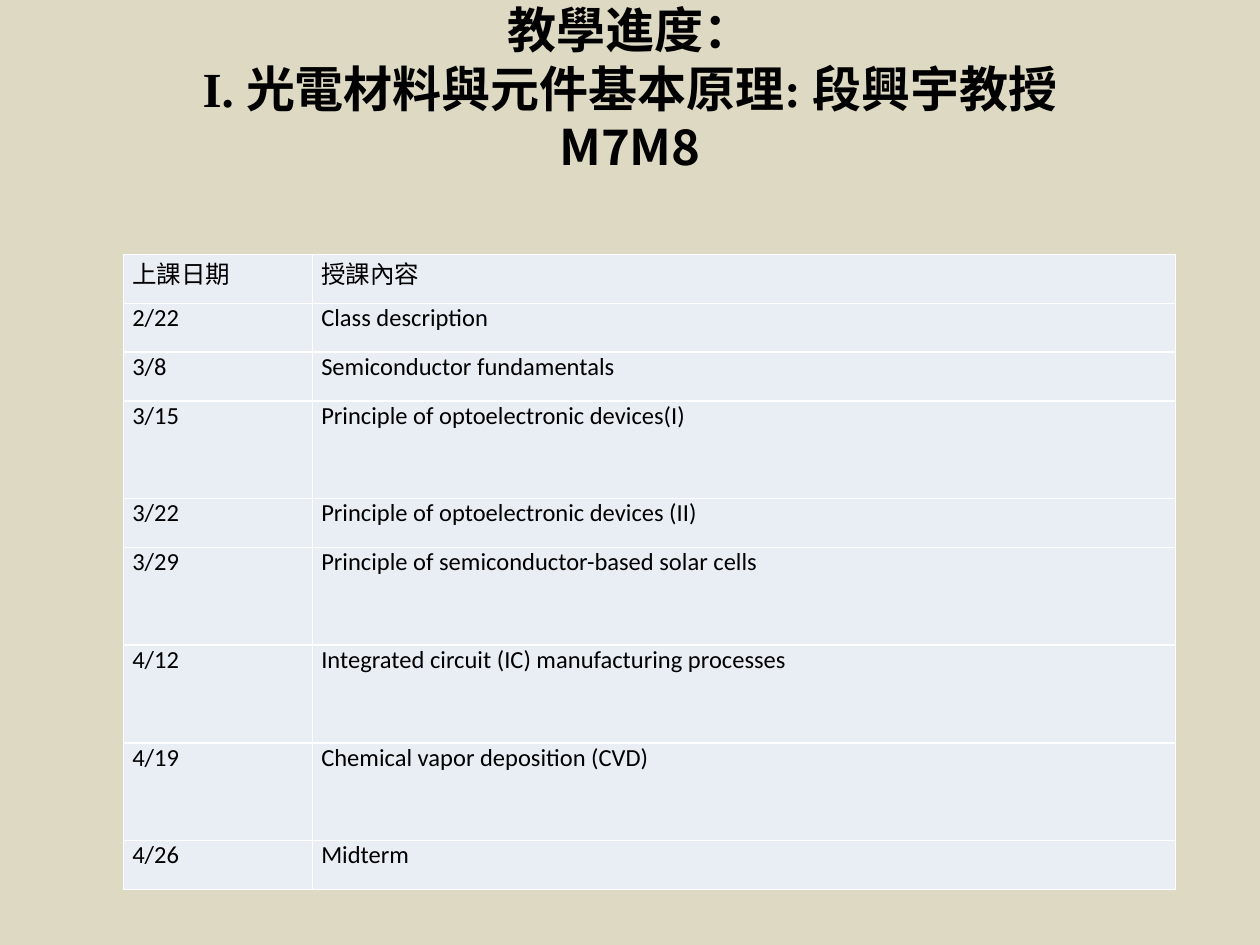
from dataclasses import dataclass

from lxml import etree
from pptx import Presentation
from pptx.dml.color import RGBColor
from pptx.enum.text import MSO_ANCHOR, MSO_AUTO_SIZE, PP_ALIGN
from pptx.oxml.ns import qn
from pptx.util import Inches, Pt

CENTER, JUSTIFY = PP_ALIGN.CENTER, PP_ALIGN.JUSTIFY
MIDDLE, TOP = MSO_ANCHOR.MIDDLE, MSO_ANCHOR.TOP
TITLE_ONLY = 5


@dataclass(frozen=True)
class Theme:
    background: str = "DDD9C3"
    cell: str = "E9EDF4"
    border: str = "FFFFFF"
    ink: str = "000000"
    cjk_font: str = "Noto Sans CJK SC"
    latin_font: str = "Times New Roman"
    table_font: str = "Calibri"
    title_size: int = 28
    table_size: int = 14
    border_width: int = 1


THEME = Theme()

HEADING = [
    ("教學進度：\n", THEME.cjk_font),
    ("I. ", THEME.latin_font),
    ("光電材料與元件基本原理", THEME.cjk_font),
    (": ", THEME.latin_font),
    ("段興宇教授\nM7M8", THEME.cjk_font),
]

# Class date, content, height in row units
SCHEDULE = [
    ("上課日期", "授課內容", 1),
    ("2/22", "Class description", 1),
    ("3/8", "Semiconductor fundamentals", 1),
    ("3/15", "Principle of optoelectronic devices(I)", 2),
    ("3/22", "Principle of optoelectronic devices (II)", 1),
    ("3/29", "Principle of semiconductor-based solar cells", 2),
    ("4/12", "Integrated circuit (IC) manufacturing processes", 2),
    ("4/19", "Chemical vapor deposition (CVD)", 2),
    ("4/26", "Midterm", 1),
]


def add_text(paragraph, text, *, font, size, bold=False, align=JUSTIFY):
    """Append formatted text; each newline becomes a line break."""
    paragraph.alignment = align
    for index, line in enumerate(text.split("\n")):
        if index:
            paragraph.add_line_break()
        if not line:
            continue
        run = paragraph.add_run()
        run.text = line
        run.font.name = font
        run.font.size = Pt(size)
        run.font.bold = bold
        run.font.color.rgb = RGBColor.from_string(THEME.ink)
        if font == THEME.cjk_font:
            east_asian = etree.SubElement(run.font._element, qn("a:ea"))
            east_asian.set("typeface", font)


def add_borders(cell):
    properties = cell._tc.get_or_add_tcPr()
    for index, side in enumerate(("a:lnL", "a:lnR", "a:lnT", "a:lnB")):
        line = etree.Element(qn(side), w=str(Pt(THEME.border_width)))
        fill = etree.SubElement(line, qn("a:solidFill"))
        etree.SubElement(fill, qn("a:srgbClr"), val=THEME.border)
        properties.insert(index, line)


def place_heading(slide, left, top, width, height):
    title = slide.shapes.title
    title.left, title.top, title.width, title.height = left, top, width, height
    frame = title.text_frame
    frame.word_wrap = True
    frame.auto_size = MSO_AUTO_SIZE.NONE
    frame.vertical_anchor = MIDDLE
    frame.margin_bottom = Inches(0.51)  # lifts the centred lines
    for text, font in HEADING:
        add_text(frame.paragraphs[0], text, font=font, size=THEME.title_size,
                 bold=True, align=CENTER)


def place_schedule(slide, left, top, width, height):
    table = slide.shapes.add_table(len(SCHEDULE), 2, left, top, width, height).table
    date_width = Inches(1.5)
    table.columns[0].width = date_width
    table.columns[1].width = width - date_width
    unit = height // sum(units for _, _, units in SCHEDULE)

    for row, (date, content, units) in zip(table.rows, SCHEDULE):
        row.height = unit * units
        for cell, text in zip(row.cells, (date, content)):
            cell.fill.solid()
            cell.fill.fore_color.rgb = RGBColor.from_string(THEME.cell)
            cell.margin_left = cell.margin_right = Inches(0.07)
            cell.margin_top = cell.margin_bottom = 0
            cell.vertical_anchor = TOP
            add_borders(cell)
            add_text(cell.text_frame.paragraphs[0], text,
                     font=THEME.table_font, size=THEME.table_size)


def main():
    deck = Presentation()
    deck.slide_width, deck.slide_height = Inches(10), Inches(7.5)
    slide = deck.slides.add_slide(deck.slide_layouts[TITLE_ONLY])
    slide.background.fill.solid()
    slide.background.fill.fore_color.rgb = RGBColor.from_string(THEME.background)
    place_heading(slide, Inches(0.5), Inches(0.3), Inches(9), Inches(1.25))
    place_schedule(slide, Inches(0.98), Inches(2.02), Inches(8.35), Inches(5.04))
    deck.save("out.pptx")


if __name__ == "__main__":
    main()
